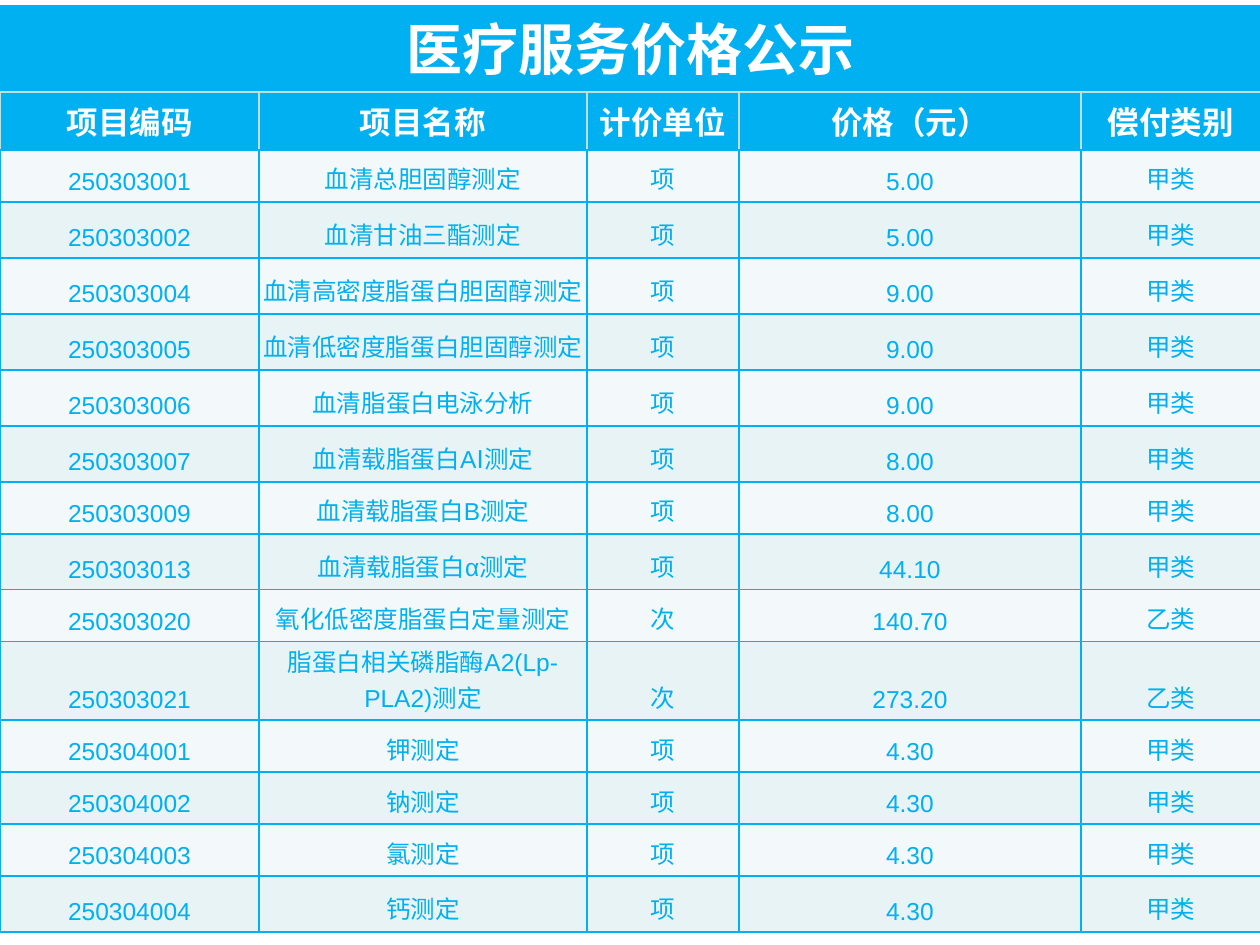
from lxml import etree
from pptx import Presentation
from pptx import util as u
from pptx.dml.color import RGBColor
from pptx.enum import text
from pptx.oxml import ns

PX = 914400 // 126
HUES = {"blue": "00B0F0", "rule": "BBE0E3", "white": "FFFFFF",
        "odd": "F3F9FA", "even": "E7F3F4"}
FONT = "Arial"
TITLE = "医疗服务价格公示"
HEADS = ["项目编码", "项目名称", "计价单位", "价格（元）", "偿付类别"]
ITEMS = [
    ("250303001", "血清总胆固醇测定", "项", "5.00", "甲类"),
    ("250303002", "血清甘油三酯测定", "项", "5.00", "甲类"),
    ("250303004", "血清高密度脂蛋白胆固醇测定", "项", "9.00", "甲类"),
    ("250303005", "血清低密度脂蛋白胆固醇测定", "项", "9.00", "甲类"),
    ("250303006", "血清脂蛋白电泳分析", "项", "9.00", "甲类"),
    ("250303007", "血清载脂蛋白AⅠ测定", "项", "8.00", "甲类"),
    ("250303009", "血清载脂蛋白B测定", "项", "8.00", "甲类"),
    ("250303013", "血清载脂蛋白α测定", "项", "44.10", "甲类"),
    ("250303020", "氧化低密度脂蛋白定量测定", "次", "140.70", "乙类"),
    ("250303021", "脂蛋白相关磷脂酶A2(Lp-PLA2)测定", "次", "273.20", "乙类"),
    ("250304001", "钾测定", "项", "4.30", "甲类"),
    ("250304002", "钠测定", "项", "4.30", "甲类"),
    ("250304003", "氯测定", "项", "4.30", "甲类"),
    ("250304004", "钙测定", "项", "4.30", "甲类"),
]
COLS = [259, 328, 152, 342, 180]
LOW, HIGH = 52, 56
ROWS = [76, LOW, LOW] + [HIGH] * 5 + [LOW, HIGH] + [LOW] * 5 + [HIGH]


def edge(cell, sides):
    props = cell._tc.get_or_add_tcPr()
    for side in "LRTB":
        line = etree.SubElement(props, ns.qn("a:ln" + side), w=str(u.Pt(1)))
        fill = etree.SubElement(line, ns.qn("a:solidFill"))
        hue = HUES["rule" if side in sides else "blue"]
        etree.SubElement(fill, ns.qn("a:srgbClr"), val=hue)


def paint(cell, fill, sides=""):
    edge(cell, sides)
    cell.fill.solid()
    cell.fill.fore_color.rgb = RGBColor.from_string(HUES[fill])


def write(cell, words, size, hue, bold):
    para = cell.text_frame.paragraphs[0]
    para.alignment = text.PP_ALIGN.CENTER
    run = para.add_run()
    run.text = words
    run.font.name = FONT
    run.font.size = u.Pt(size)
    run.font.bold = bold
    run.font.color.rgb = RGBColor.from_string(HUES[hue])
    return para


def banner(grid):
    for cell in grid.rows[0].cells:
        paint(cell, "blue", "B")
    first = grid.cell(0, 0)
    first.merge(grid.cell(0, len(COLS) - 1))
    first.vertical_anchor = text.MSO_ANCHOR.MIDDLE
    write(first, TITLE, 32, "white", True).line_spacing = 0.9


def header(grid):
    for cell, words in zip(grid.rows[1].cells, HEADS):
        paint(cell, "blue", "LTR")
        write(cell, words, 18, "white", True)


def body(grid):
    for num, item in enumerate(ITEMS):
        for cell, words in zip(grid.rows[num + 2].cells, item):
            paint(cell, "even" if num % 2 else "odd")
            cell.vertical_anchor = text.MSO_ANCHOR.BOTTOM
            cell.margin_left = cell.margin_right = cell.margin_top = PX
            cell.margin_bottom = 6 * PX
            write(cell, words, 14, "blue", False)


def prices(slide, left, top):
    frame = slide.shapes.add_table(len(ROWS), len(COLS), left * PX, top * PX,
                                   sum(COLS) * PX, sum(ROWS) * PX)
    grid = frame.table
    grid.first_row = grid.horz_banding = False
    for col, wide in zip(grid.columns, COLS):
        col.width = wide * PX
    for row, tall in zip(grid.rows, ROWS):
        row.height = tall * PX
    banner(grid)
    header(grid)
    body(grid)


def main():
    deck = Presentation()
    deck.slide_width, deck.slide_height = 1260 * PX, 945 * PX
    prices(deck.slides.add_slide(deck.slide_layouts[6]), 0, 6)
    deck.save("out.pptx")


if __name__ == "__main__":
    main()
